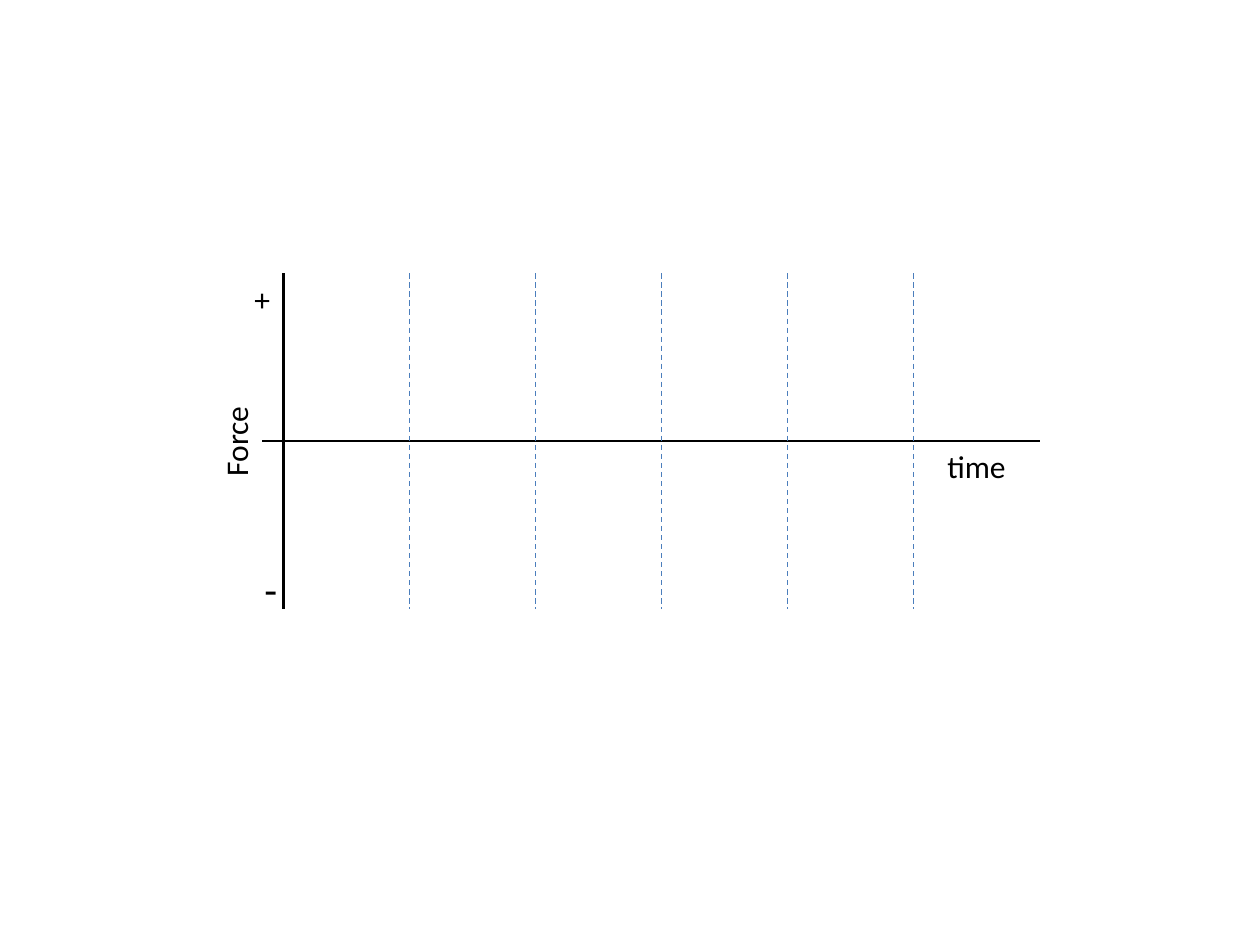
import pptx
import pptx.dml.color
import pptx.enum.dml
import pptx.enum.shapes
import pptx.enum.text
import pptx.oxml.ns
import pptx.util
from lxml import etree
from pptx.util import Inches

BLACK = pptx.dml.color.RGBColor(0x00, 0x00, 0x00)
BLUE = pptx.dml.color.RGBColor(0x4B, 0x7E, 0xBC)

# Content: text, left, top, width, height, size, rotation
LABELS = [
    ("time", 7.42, 3.5, 0.67, 0.4, 18, 0),
    ("Force", 1.49, 3.3, 0.76, 0.4, 18, 270),
    ("+", 1.92, 2.17, 0.33, 0.4, 18, 0),
    ("-", 2, 4.42, 0.31, 0.5, 24, 0),
]

# Graph geometry
FORCE_X, ZERO_Y = 2.25, 3.5
TOP, BOTTOM = 2.17, 4.83
TIME_START, TIME_END = 2.08, 8.25
INTERVALS, INTERVAL_WIDTH = 5, 1

AXIS = {"width": pptx.util.Pt(1.5)}
GUIDE = {"width": pptx.util.Pt(0.75),
         "dash_style": pptx.enum.dml.MSO_LINE_DASH_STYLE.DASH}


def add_line(slide, start, end, color, line_format):
    line = slide.shapes.add_connector(
        pptx.enum.shapes.MSO_CONNECTOR.STRAIGHT,
        *(Inches(value) for value in (*start, *end)))
    line.line.color.rgb = color
    for name, value in line_format.items():
        setattr(line.line, name, value)
    etree.SubElement(line._element.spPr, pptx.oxml.ns.qn("a:effectLst"))


def add_label(slide, text, left, top, width, height, size, rotation):
    label = slide.shapes.add_textbox(
        *(Inches(value) for value in (left, top, width, height)))
    label.rotation = rotation
    frame = label.text_frame
    frame.word_wrap = False
    frame.auto_size = pptx.enum.text.MSO_AUTO_SIZE.SHAPE_TO_FIT_TEXT
    run = frame.paragraphs[0].add_run()
    run.text = text
    run.font.color.rgb = BLACK
    for name, value in {"name": "Calibri", "size": pptx.util.Pt(size)}.items():
        setattr(run.font, name, value)


def main():
    deck = pptx.Presentation()
    deck.slide_width, deck.slide_height = Inches(10), Inches(7.5)
    slide = deck.slides.add_slide(deck.slide_layouts[6])

    # Time and force axes
    add_line(slide, (TIME_START, ZERO_Y), (TIME_END, ZERO_Y), BLACK, AXIS)
    add_line(slide, (FORCE_X, BOTTOM), (FORCE_X, TOP), BLACK, AXIS)

    # Axis labels
    for label in LABELS:
        add_label(slide, *label)

    # Dashed guides at equal time intervals
    for interval in range(1, INTERVALS + 1):
        x = FORCE_X + interval * INTERVAL_WIDTH
        add_line(slide, (x, TOP), (x, BOTTOM), BLUE, GUIDE)

    deck.save("out.pptx")


if __name__ == "__main__":
    main()
